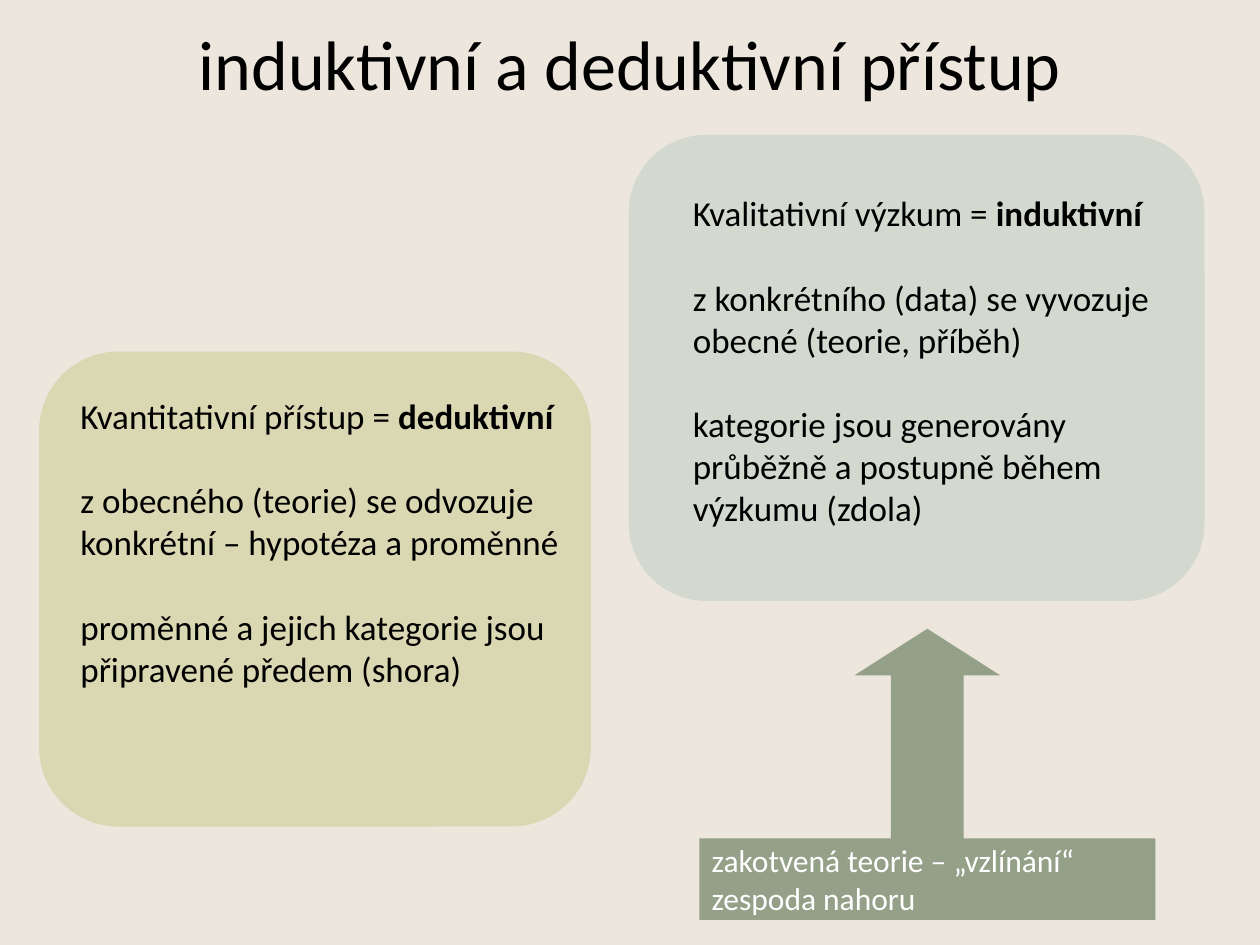
from pptx import Presentation
from pptx.dml.color import RGBColor
from pptx.enum import shapes, text
from pptx.util import Inches, Pt

THEME = {
    "font": "Calibri",
    "background": "ECE6DD", "dark": "000000", "light": "FFFFFF",
    "olive": "DAD7B3", "sage": "D4D9CF", "green": "94A088",
    "title": 40, "body": 20, "label": 18, "gap": 24.4,
}

# Content: each paragraph is a list of (wording, bold) spans
TITLE = "induktivní a deduktivní přístup"
PANELS = [
    {"fill": "olive", "panel": (0.31, 2.79, 4.38, 3.77), "text": (0.54, 3.08, 4, 3.06),
     "paragraphs": [
         [("Kvantitativní přístup = ", False), ("deduktivní", True)],
         [("z obecného (teorie) se odvozuje konkrétní – hypotéza a proměnné", False)],
         [("proměnné a jejich kategorie jsou připravené předem (shora)", False)]]},
    {"fill": "sage", "panel": (4.99, 1.07, 4.57, 3.7), "text": (5.4, 1.47, 3.92, 3.7),
     "paragraphs": [
         [("Kvalitativní výzkum = ", False), ("induktivní", True)],
         [("z konkrétního (data) se vyvozuje obecné (teorie, příběh)", False)],
         [("kategorie jsou generovány průběžně a postupně během výzkumu (zdola)", False)]]},
]
CALLOUT = {"place": (5.55, 4.99, 3.62, 2.31), "adjust": (0.25, 0.25, 0.16, 0.28),
           "text": "zakotvená teorie – „vzlínání“ zespoda nahoru"}


def color(name):
    return RGBColor.from_string(THEME[name])


def write(shape, paragraphs, size, ink="dark", align=text.PP_ALIGN.LEFT,
          anchor=text.MSO_ANCHOR.TOP):
    frame = shape.text_frame
    frame.word_wrap = True
    frame.vertical_anchor = anchor
    for index, spans in enumerate(paragraphs):
        para = frame.add_paragraph() if index else frame.paragraphs[0]
        para.alignment = align
        para.space_before = Pt(THEME["gap"] if index else 0)
        for wording, bold in spans:
            span = para.add_run()
            span.text = wording
            span.font.color.rgb = color(ink)
            formats = {"name": THEME["font"], "size": Pt(THEME[size]), "bold": bold}
            for key, value in formats.items():
                setattr(span.font, key, value)


def add_filled(page, kind, place, fill):
    shape = page.shapes.add_shape(kind, *map(Inches, place))
    shape.shadow.inherit = False
    shape.fill.solid()
    shape.fill.fore_color.rgb = color(fill)
    shape.line.fill.background()
    return shape


def main():
    deck = Presentation()
    deck.slide_width, deck.slide_height = Inches(10), Inches(7.5)
    page = deck.slides.add_slide(deck.slide_layouts[5])
    page.background.fill.solid()
    page.background.fill.fore_color.rgb = color("background")

    # Title
    title = page.shapes.title
    title.left, title.top, title.width, title.height = map(Inches, (0.5, 0, 9, 0.99))
    write(title, [[(TITLE, False)]], "title",
          align=text.PP_ALIGN.CENTER, anchor=text.MSO_ANCHOR.MIDDLE)

    # Panels, then their texts
    for panel in PANELS:
        add_filled(page, shapes.MSO_SHAPE.ROUNDED_RECTANGLE, panel["panel"], panel["fill"])
    for panel in PANELS:
        box = page.shapes.add_textbox(*map(Inches, panel["text"]))
        write(box, panel["paragraphs"], "body")

    # Upward arrow with its label
    callout = add_filled(page, shapes.MSO_SHAPE.UP_ARROW_CALLOUT, CALLOUT["place"], "green")
    for index, value in enumerate(CALLOUT["adjust"]):
        callout.adjustments[index] = value
    write(callout, [[(CALLOUT["text"], False)]], "label", "light",
          anchor=text.MSO_ANCHOR.MIDDLE)

    deck.save("out.pptx")


if __name__ == "__main__":
    main()
